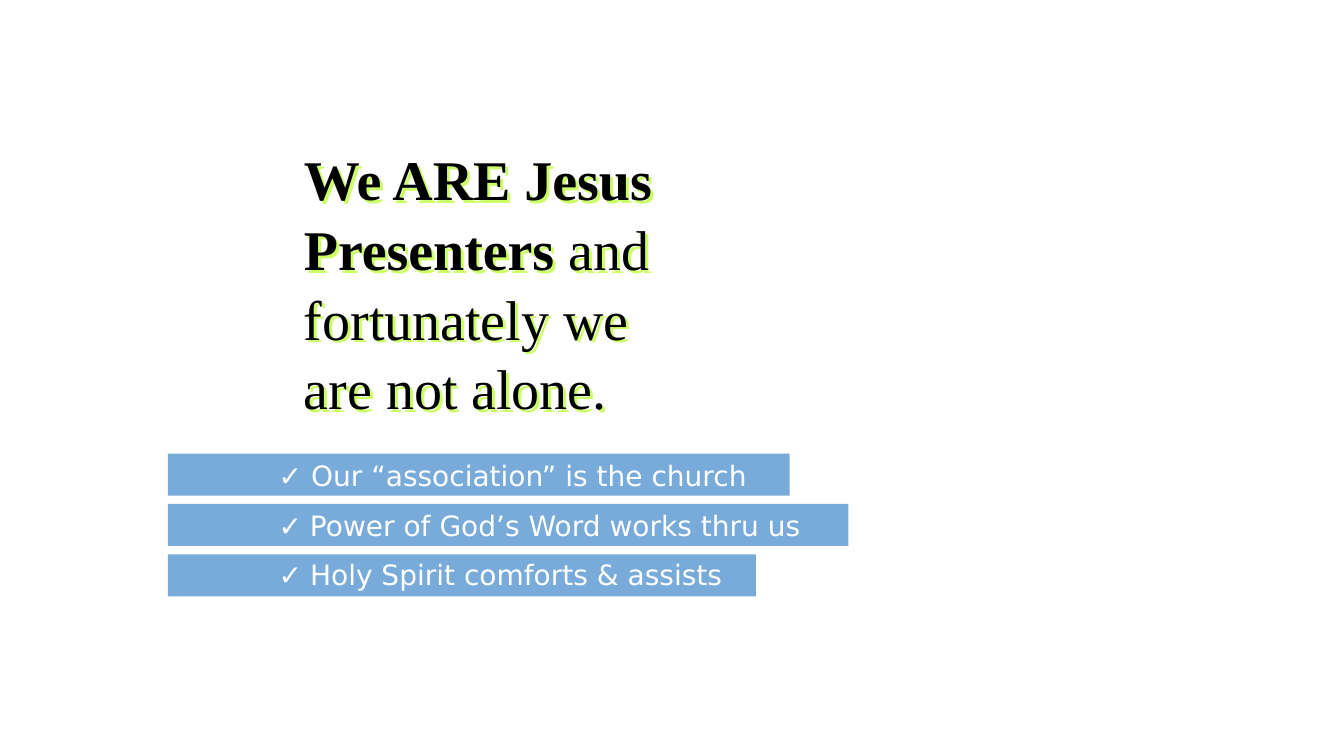
"""Build a slide with a shadowed statement above three highlighted points."""
from lxml.etree import SubElement
from pptx import Presentation
from pptx.dml.color import RGBColor
from pptx.enum.shapes import MSO_SHAPE as Shape
from pptx.enum.text import MSO_ANCHOR as Anchor
from pptx.oxml.ns import qn
from pptx.util import Pt

BLACK = RGBColor(0x00, 0x00, 0x00)
WHITE = RGBColor(0xFF, 0xFF, 0xFF)
BLUE = RGBColor(0x78, 0xAB, 0xDA)
LIME = RGBColor(0xCC, 0xFF, 0x66)


def add_text(paragraph, text, *, font, size, color, bold=False):
    run = paragraph.add_run()
    run.text = text
    run.font.name = font
    run.font.size = Pt(size)
    run.font.color.rgb = color
    run.font.bold = bold


class SlideBuilder:
    def __init__(self, slide):
        self.slide = slide
        self.heading = {"font": "Times New Roman", "size": 40, "color": BLACK}
        self.point = {"size": 20, "color": WHITE}

    def bar(self, left, top, width, height):
        bar = self.slide.shapes.add_shape(
            Shape.RECTANGLE, Pt(left), Pt(top), Pt(width), Pt(height))
        bar.shadow.inherit = False
        bar.fill.solid()
        bar.fill.fore_color.rgb = BLUE
        bar.line.fill.background()

    def text_box(self, left, top, width, height, anchor=Anchor.TOP):
        box = self.slide.shapes.add_textbox(Pt(left), Pt(top), Pt(width), Pt(height))
        box.text_frame.word_wrap = True
        box.text_frame.vertical_anchor = anchor
        return box

    def statement(self, strong, rest, last_line):
        box = self.text_box(210, 96, 426, 210, Anchor.MIDDLE)
        effects = SubElement(box.element.spPr, qn("a:effectLst"))
        shadow = SubElement(effects, qn("a:outerShdw"), dist=str(Pt(3)),
                            dir="2700000", algn="ctr", rotWithShape="0")
        SubElement(shadow, qn("a:srgbClr"), val=str(LIME))
        paragraph = box.text_frame.paragraphs[0]
        paragraph.line_spacing = 1.04
        add_text(paragraph, strong, bold=True, **self.heading)
        add_text(paragraph, rest, **self.heading)
        paragraph.add_line_break()
        add_text(paragraph, last_line, **self.heading)

    def check_point(self, text, top, width, check_font):
        box = self.text_box(192, top, width, 31)
        paragraph = box.text_frame.paragraphs[0]
        add_text(paragraph, "✓ ", font=check_font, **self.point)
        add_text(paragraph, text, font="DejaVu Sans", **self.point)


def main():
    presentation = Presentation()
    presentation.slide_width = Pt(960)
    presentation.slide_height = Pt(540)
    builder = SlideBuilder(presentation.slides.add_slide(presentation.slide_layouts[6]))

    builder.statement("We ARE Jesus Presenters", " and fortunately we", "are not alone.")
    points = [
        ("Our “association” is the church", 444, 324, 450, "DejaVu Sans"),
        ("Power of God’s Word works thru us", 486, 360, 468, "Arial"),
        ("Holy Spirit comforts & assists", 420, 395, 408, "Arial"),
    ]
    for row, (text, bar_width, text_top, text_width, check_font) in enumerate(points):
        builder.bar(120, 324 + 36 * row, bar_width, 30)
        builder.check_point(text, text_top, text_width, check_font)

    presentation.save("out.pptx")


if __name__ == "__main__":
    main()
